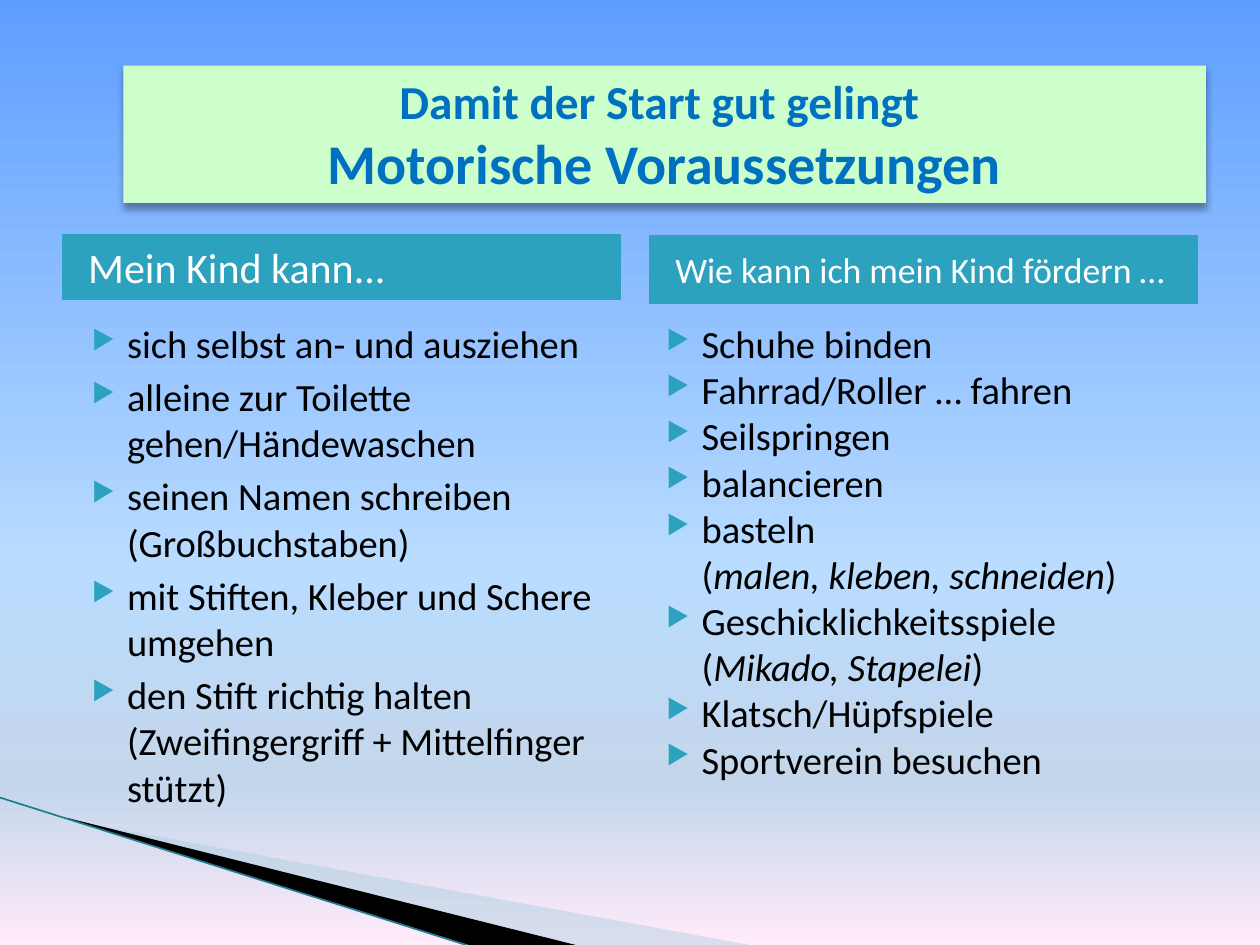
import lxml.etree
import pptx
import pptx.dml.color
import pptx.enum.shapes
import pptx.enum.text
import pptx.oxml
import pptx.oxml.ns
import pptx.util

Inches = pptx.util.Inches
Pt = pptx.util.Pt
qn = pptx.oxml.ns.qn
ANCHOR = pptx.enum.text.MSO_ANCHOR
ALIGN = pptx.enum.text.PP_ALIGN

FONT = "Calibri"
COLORS = {
    "title_fill": "CCFFCC",
    "title_text": "0070C0",
    "accent": "2DA2BF",
    "white": "FFFFFF",
    "black": "000000",
    "pale_wedge": "A0CBDC",
    "edge_line": "1F7A92",
}
SKY = [(0, "5E9EFF"), (60, "B9DCFF"), (83, "C4D6EB"), (100, "FFEBFA")]

TITLE = [("Damit der Start gut gelingt ", 27), ("Motorische Voraussetzungen", 32)]
HEADINGS = [
    ("Mein Kind kann...", 24, (0.5, 1.86, 4.42, 0.52)),
    ("Wie kann ich mein Kind fördern …", 20.4, (5.16, 1.87, 4.34, 0.54)),
]
SKILLS = [
    ["sich selbst an- und ausziehen"],
    ["alleine zur Toilette gehen/Händewaschen"],
    ["seinen Namen schreiben (Großbuchstaben)"],
    ["mit Stiften, Kleber und Schere umgehen"],
    ["den Stift richtig halten", "\n", "(Zweifingergriff + Mittelfinger stützt)"],
]
IDEAS = [
    ["Schuhe binden"],
    ["Fahrrad/Roller … fahren"],
    ["Seilspringen"],
    ["balancieren"],
    ["basteln", "\n", "(", ("malen, kleben, schneiden",), ")"],
    ["Geschicklichkeitsspiele", "\n", "(", ("Mikado, Stapelei",), ")"],
    ["Klatsch/Hüpfspiele"],
    ["Sportverein besuchen"],
]
LISTS = [
    (SKILLS, 4, (0.51, 2.49, 4.42, 4.57)),
    (IDEAS, 0, (5.07, 2.49, 4.92, 4.32)),
]
WEDGES = [
    ("pale_wedge", 40, [(0.55, 6.51), (5.95, 7.5), (4.56, 7.5), (0.55, 6.5)]),
    ("black", 100, [(0.53, 6.49), (4.57, 7.5), (3.72, 7.5), (0.54, 6.5)]),
]


def rgb(name):
    return pptx.dml.color.RGBColor.from_string(COLORS[name])


def add_node(parent, tag, **attributes):
    return lxml.etree.SubElement(parent, qn(tag), {k: str(v) for k, v in attributes.items()})


def paint_sky(slide):
    fill = slide.background.fill
    fill.gradient()
    fill.gradient_angle = 270
    stops = slide.element.find(".//" + qn("a:gsLst"))
    for stop in list(stops):
        stops.remove(stop)
    for position, color in SKY:
        add_node(add_node(stops, "a:gs", pos=position * 1000), "a:srgbClr", val=color)


def add_wedge(slide, color, opacity, points):
    builder = slide.shapes.build_freeform(
        Inches(points[0][0]), Inches(points[0][1]), scale=1.0)
    builder.add_line_segments([(Inches(x), Inches(y)) for x, y in points[1:]], close=True)
    wedge = builder.convert_to_shape()
    wedge.shadow.inherit = False
    wedge.fill.solid()
    wedge.fill.fore_color.rgb = rgb(color)
    wedge.line.fill.background()
    if opacity < 100:
        fill_color = wedge.element.spPr.find(qn("a:solidFill"))[0]
        add_node(fill_color, "a:alpha", val=opacity * 1000)


def add_edge_line(slide):
    line = slide.shapes.add_connector(
        pptx.enum.shapes.MSO_CONNECTOR.STRAIGHT,
        Inches(0), Inches(6.33), Inches(3.7), Inches(7.5))
    line.line.color.rgb = rgb("edge_line")
    line.line.width = Pt(0.95)
    add_node(line.element.spPr, "a:effectLst")


def add_panel(slide, place, color):
    panel = slide.shapes.add_shape(
        pptx.enum.shapes.MSO_SHAPE.RECTANGLE, *map(Inches, place))
    panel.shadow.inherit = False
    panel.fill.solid()
    panel.fill.fore_color.rgb = rgb(color)
    panel.line.fill.background()
    panel.text_frame.word_wrap = True
    panel.text_frame.vertical_anchor = ANCHOR.MIDDLE
    return panel


def add_span(para, text, size, color, bold=False, italic=False):
    span = para.add_run()
    span.text = text
    span.font.name = FONT
    span.font.size = Pt(size)
    span.font.color.rgb = rgb(color)
    span.font.bold = bold
    span.font.italic = italic


def add_title(slide):
    panel = add_panel(slide, (0.98, 0.52, 8.59, 1.09), "title_fill")
    effects = panel.element.spPr.find(qn("a:effectLst"))
    shadow = add_node(effects, "a:outerShdw", blurRad=Pt(4), dist=Pt(3),
                      dir=5400000, rotWithShape=0)
    add_node(add_node(shadow, "a:srgbClr", val=COLORS["black"]), "a:alpha", val=35000)
    para = panel.text_frame.paragraphs[0]
    para.alignment = ALIGN.CENTER
    for index, (text, size) in enumerate(TITLE):
        if index:
            para.add_line_break()
        add_span(para, text, size, "title_text", bold=True)


def add_heading(slide, text, size, place):
    panel = add_panel(slide, place, "accent")
    panel.line.color.rgb = rgb("accent")
    panel.line.width = Pt(0.75)
    panel.text_frame.margin_left = Inches(0.2)
    para = panel.text_frame.paragraphs[0]
    para.alignment = ALIGN.LEFT
    add_span(para, text, size, "white")


def add_bullet(para):
    props = para._p.get_or_add_pPr()
    props.set("marL", str(Inches(0.4)))
    props.set("indent", str(Inches(-0.28)))
    add_node(add_node(props, "a:buClr"), "a:srgbClr", val=COLORS["accent"])
    add_node(props, "a:buSzPct", val=68000)
    add_node(props, "a:buChar", char="▶")


def add_list(slide, items, gap, place):
    frame = slide.shapes.add_textbox(*map(Inches, place)).text_frame
    frame.word_wrap = True
    for index, parts in enumerate(items):
        para = frame.add_paragraph() if index else frame.paragraphs[0]
        add_bullet(para)
        para.space_before = Pt(gap if index else 0)
        for part in parts:
            if part == "\n":
                para.add_line_break()
            elif isinstance(part, tuple):
                add_span(para, part[0], 22, "black", italic=True)
            else:
                add_span(para, part, 22, "black")


def main():
    deck = pptx.Presentation()
    deck.slide_width, deck.slide_height = Inches(10), Inches(7.5)
    slide = deck.slides.add_slide(deck.slide_layouts[6])
    paint_sky(slide)
    for wedge in WEDGES:
        add_wedge(slide, *wedge)
    add_edge_line(slide)
    add_title(slide)
    for heading in HEADINGS:
        add_heading(slide, *heading)
    for column in LISTS:
        add_list(slide, *column)
    deck.save("out.pptx")


if __name__ == "__main__":
    main()
